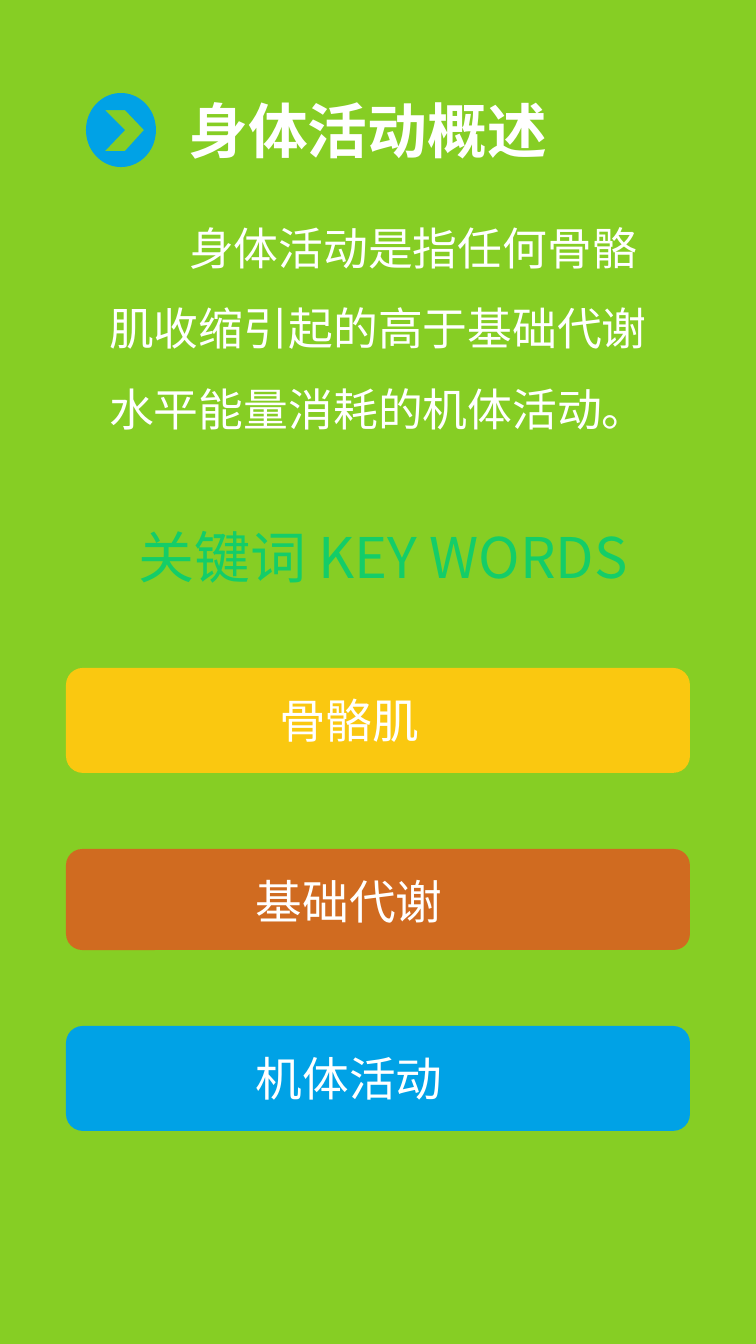
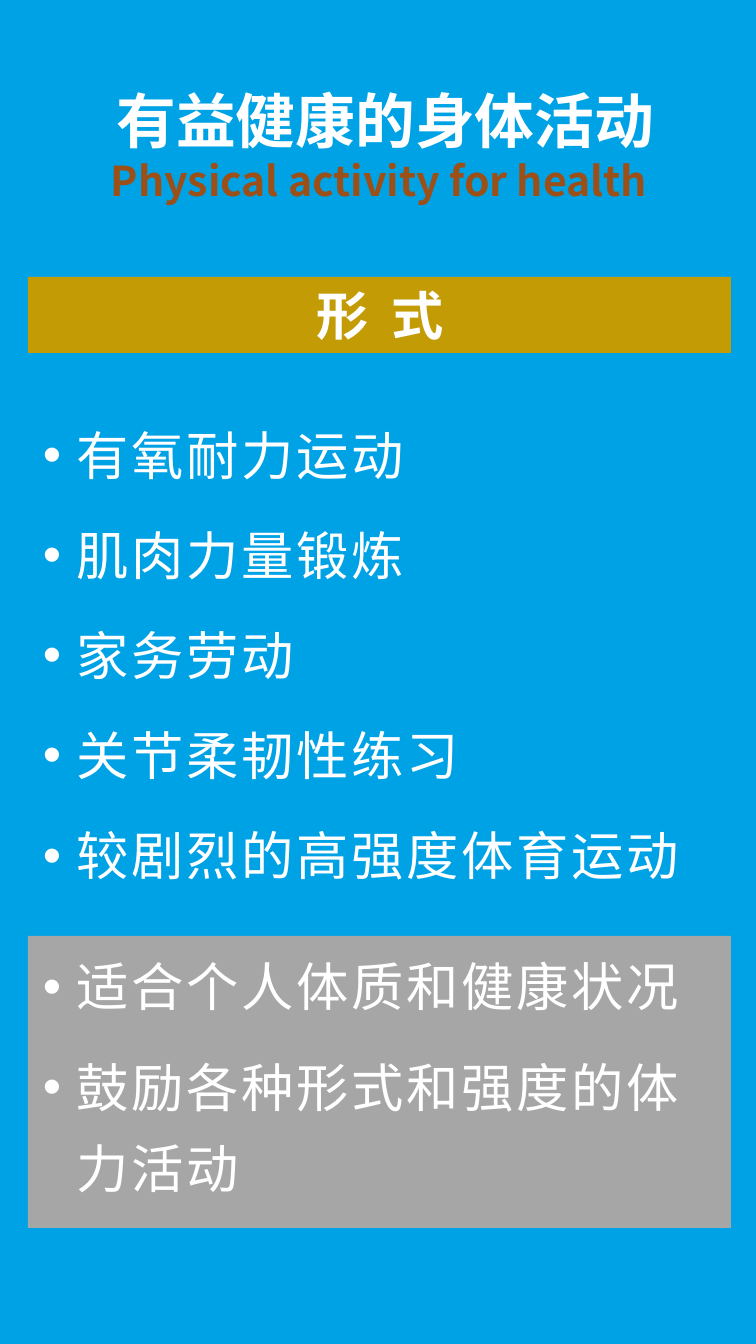
from math import cos, pi, sin

from lxml.etree import SubElement
from pptx import Presentation
from pptx.dml.color import RGBColor
from pptx.enum.shapes import MSO_SHAPE as Shape
from pptx.enum.text import MSO_ANCHOR as Anchor, MSO_AUTO_SIZE as AutoSize, PP_ALIGN as Align
from pptx.oxml.ns import qn
from pptx.util import Inches, Pt

PAGE_WIDTH, PAGE_HEIGHT = 756, 1344
PX = Inches(10) / PAGE_HEIGHT
FONT = "Noto Sans CJK SC"
COLORS = {
    "green": "86CE24", "blue": "00A2E6", "yellow": "FAC810", "orange": "D06B20",
    "gold": "C39B04", "gray": "A6A6A6", "brown": "9C5018", "white": "FFFFFF",
    "mint": "14CD68", "teal": "035C7D",
}

OVERVIEW_TITLE = "身体活动概述"
DEFINITION = "身体活动是指任何骨骼肌收缩引起的高于基础代谢水平能量消耗的机体活动。"
KEYWORD_HEADING = "关键词 KEY WORDS"
KEYWORDS = [
    ("骨骼肌", "yellow", 668, 105),
    ("基础代谢", "orange", 849, 101),
    ("机体活动", "blue", 1026, 105),
]
HEALTH_TITLE = "有益健康的身体活动"
HEALTH_SUBTITLE = "Physical activity for health"
FORMS_HEADING = "形 式"
FORMS = ["有氧耐力运动", "肌肉力量锻炼", "家务劳动", "关节柔韧性练习", "较剧烈的高强度体育运动"]
ADVICE = ["适合个人体质和健康状况", "鼓励各种形式和强度的体力活动"]

CHEVRON = [(105, 110), (125, 130), (105, 151), (125, 151), (144, 130), (125, 110)]
BADGE_CENTER, BADGE_RADII, BADGE_STEPS = (121, 130), (35, 37), 72


def emu(*lengths):
    return [round(length * PX) for length in lengths]


def rgb(name):
    return RGBColor.from_string(COLORS[name])


def paint(shape, color):
    shape.shadow.inherit = False
    shape.fill.solid()
    shape.fill.fore_color.rgb = rgb(color)
    shape.line.fill.background()


def style(para, size, color="white", bold=False, align=Align.CENTER, latin=FONT, spacing=0):
    para.alignment = align
    for span in para.runs:
        span.font.size = Pt(size)
        span.font.bold = bold
        span.font.color.rgb = rgb(color)
        span.font.name = latin
        properties = span.font._element
        SubElement(properties, qn("a:ea")).set("typeface", FONT)
        if spacing:
            properties.set("spc", str(round(spacing * 100)))


def indent(para, margin, first=0):
    properties = para._p.get_or_add_pPr()
    for name, length in zip(("marL", "indent"), emu(margin, first)):
        properties.set(name, str(length))
    return properties


def add_page(deck, color, titled_lines, place):
    page = deck.slides.add_slide(deck.slide_layouts[5])
    page.background.fill.solid()
    page.background.fill.fore_color.rgb = rgb(color)
    title = page.shapes.title
    title.left, title.top, title.width, title.height = emu(*place)
    frame = title.text_frame
    frame.text = "\n".join(titled_lines)
    frame.word_wrap = True
    frame.auto_size = AutoSize.NONE
    frame.vertical_anchor = Anchor.TOP
    return page, frame.paragraphs


def add_text(page, text, place, size, **look):
    box = page.shapes.add_textbox(*emu(*place))
    frame = box.text_frame
    frame.word_wrap = True
    frame.text = text
    para = frame.paragraphs[0]
    style(para, size, **look)
    return para


def add_panel(page, kind, place, color):
    panel = page.shapes.add_shape(kind, *emu(*place))
    paint(panel, color)
    return panel


def fill_bullets(box, items):
    frame = box.text_frame
    frame.word_wrap = True
    frame.vertical_anchor = Anchor.TOP
    frame.margin_left, frame.margin_right = emu(15, 12)
    frame.margin_top = frame.margin_bottom = 0
    frame.text = "\n".join(items)
    for para in frame.paragraphs:
        para.line_spacing = 1.3
        para.space_after = Pt(10)
        properties = indent(para, 34, -34)
        SubElement(properties, qn("a:buFont")).set("typeface", "Arial")
        SubElement(properties, qn("a:buChar")).set("char", "•")
        style(para, 28, align=Align.LEFT, spacing=1.5)


def add_badge(page):
    (x, y), (rx, ry) = BADGE_CENTER, BADGE_RADII
    angles = [2 * pi * step / BADGE_STEPS for step in range(BADGE_STEPS)]
    circle = [emu(x + rx * cos(angle), y + ry * sin(angle)) for angle in angles]
    arrow = [emu(*point) for point in reversed(CHEVRON)]
    builder = page.shapes.build_freeform(*circle[0])
    builder.add_line_segments(circle[1:])
    builder.move_to(*arrow[0])
    builder.add_line_segments(arrow[1:])
    paint(builder.convert_to_shape(), "blue")


def build_overview(deck):
    page, paras = add_page(deck, "green", [OVERVIEW_TITLE], (175, 87, 408, 86))
    style(paras[0], 32, bold=True, align=Align.LEFT)
    add_badge(page)
    para = add_text(page, DEFINITION, (86, 187, 584, 258), 24, latin="Arial")
    para.line_spacing = 1.5
    indent(para, 0, 70)
    for word, color, top, height in KEYWORDS:
        card = add_panel(page, Shape.ROUNDED_RECTANGLE, (66, top, 624, height), color)
        card.adjustments[0] = 0.16
        add_text(page, word, (128, top + 17, 442, 70), 25)
    heading = add_text(page, KEYWORD_HEADING, (76, 516, 614, 81), 30)
    fill = heading.runs[0].font.fill
    fill.gradient()
    fill.gradient_angle = 270
    for stop, color in zip(fill.gradient_stops, ("mint", "teal")):
        stop.color.rgb = rgb(color)


def build_health(deck):
    lines = [HEALTH_TITLE, HEALTH_SUBTITLE]
    page, paras = add_page(deck, "blue", lines, (1, 77, 756, 136))
    for para, size, color, margin in zip(paras, (32, 22), ("white", "brown"), (13, 0)):
        style(para, size, color, bold=True)
        indent(para, margin)
    add_panel(page, Shape.RECTANGLE, (28, 277, 703, 76), "gold")
    add_text(page, FORMS_HEADING, (290, 277, 180, 76), 28, bold=True, spacing=3)
    fill_bullets(page.shapes.add_textbox(*emu(28, 404, 703, 740)), FORMS)
    fill_bullets(add_panel(page, Shape.RECTANGLE, (28, 936, 703, 292), "gray"), ADVICE)


def main():
    deck = Presentation()
    deck.slide_width, deck.slide_height = emu(PAGE_WIDTH, PAGE_HEIGHT)
    build_overview(deck)
    build_health(deck)
    deck.save("out.pptx")


if __name__ == "__main__":
    main()
